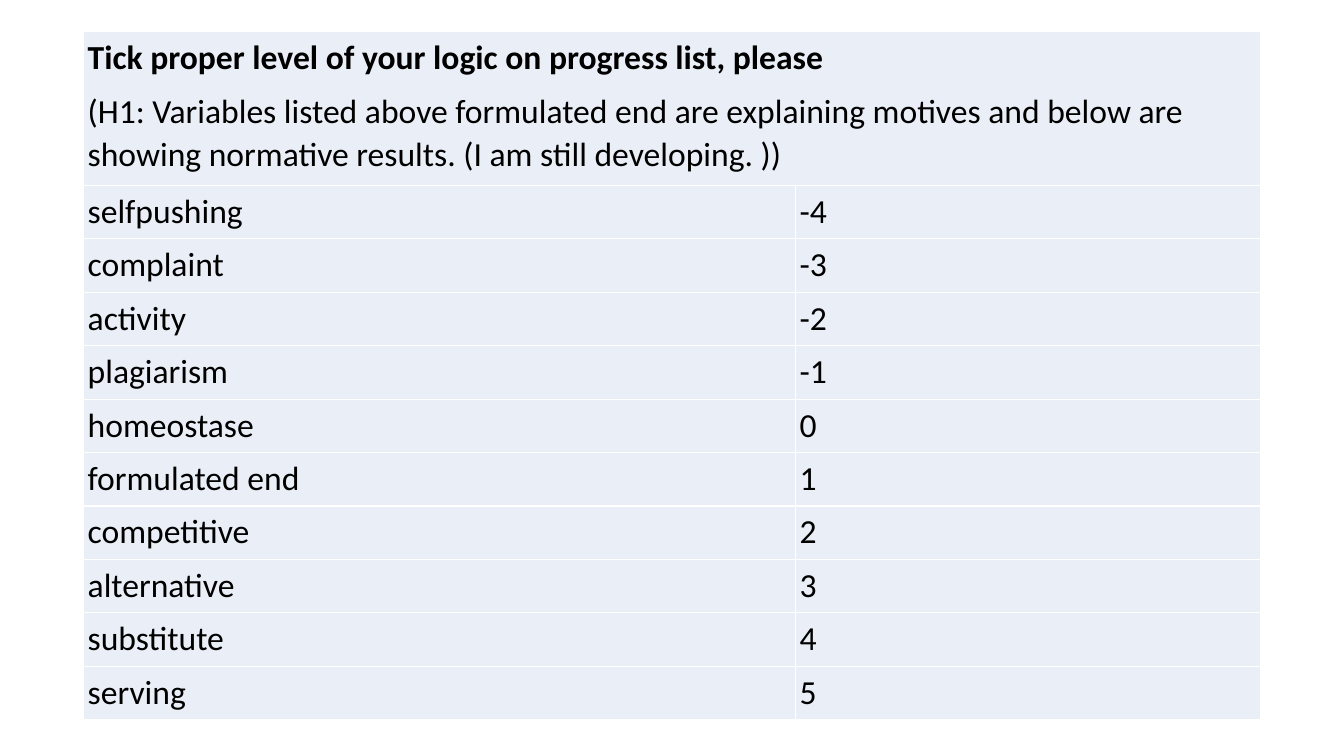
from pptx import Presentation
from pptx.dml.color import RGBColor
from pptx.util import Inches, Pt

BLACK = RGBColor(0x00, 0x00, 0x00)
PALE = RGBColor(0xEA, 0xEF, 0xF7)
FONT = "Calibri"
PAD = Inches(0.04)
COLS = (7.06, 4.61)
HEAD_H = 1.53
ROW_H = 0.53
FIRST = -4

TITLE = "Tick proper level of your logic on progress list, please"
NOTE = (
    "(H1: Variables listed above formulated end are explaining motives "
    "and below are showing normative results. (I am still developing. ))"
)
LEVELS = (
    "selfpushing", "complaint", "activity", "plagiarism", "homeostase",
    "formulated end", "competitive", "alternative", "substitute", "serving",
)


def fill_cell(cell, *lines):
    cell.fill.solid()
    cell.fill.fore_color.rgb = PALE
    cell.margin_left = cell.margin_right = PAD
    cell.margin_top = cell.margin_bottom = PAD
    cell.text = "\n".join(lines)
    for para in cell.text_frame.paragraphs:
        para.line_spacing = 1.05
        para.space_after = Pt(8)
        para.font.name = FONT
        para.font.size = Pt(24)
        para.font.bold = False
        para.font.color.rgb = BLACK


def add_grid(slide):
    count = len(LEVELS)
    grid = slide.shapes.add_table(
        count + 1, len(COLS), Inches(0.83), Inches(0.31),
        Inches(sum(COLS)), Inches(HEAD_H + count * ROW_H),
    ).table
    grid.first_row = False
    grid.horz_banding = False
    for col, width in zip(grid.columns, COLS):
        col.width = Inches(width)
    for row in grid.rows:
        row.height = Inches(ROW_H)
    grid.rows[0].height = Inches(HEAD_H)
    return grid


def add_head(grid):
    head = grid.cell(0, 0)
    head.merge(grid.cell(0, 1))
    fill_cell(head, TITLE, NOTE)
    head.text_frame.paragraphs[0].font.bold = True


def add_levels(grid):
    for row, level in enumerate(LEVELS, 1):
        fill_cell(grid.cell(row, 0), level)
        fill_cell(grid.cell(row, 1), str(FIRST + row - 1))


def main():
    deck = Presentation()
    deck.slide_width = Inches(13.33)
    deck.slide_height = Inches(7.5)
    slide = deck.slides.add_slide(deck.slide_layouts[6])
    grid = add_grid(slide)
    add_head(grid)
    add_levels(grid)
    deck.save("out.pptx")


if __name__ == "__main__":
    main()
